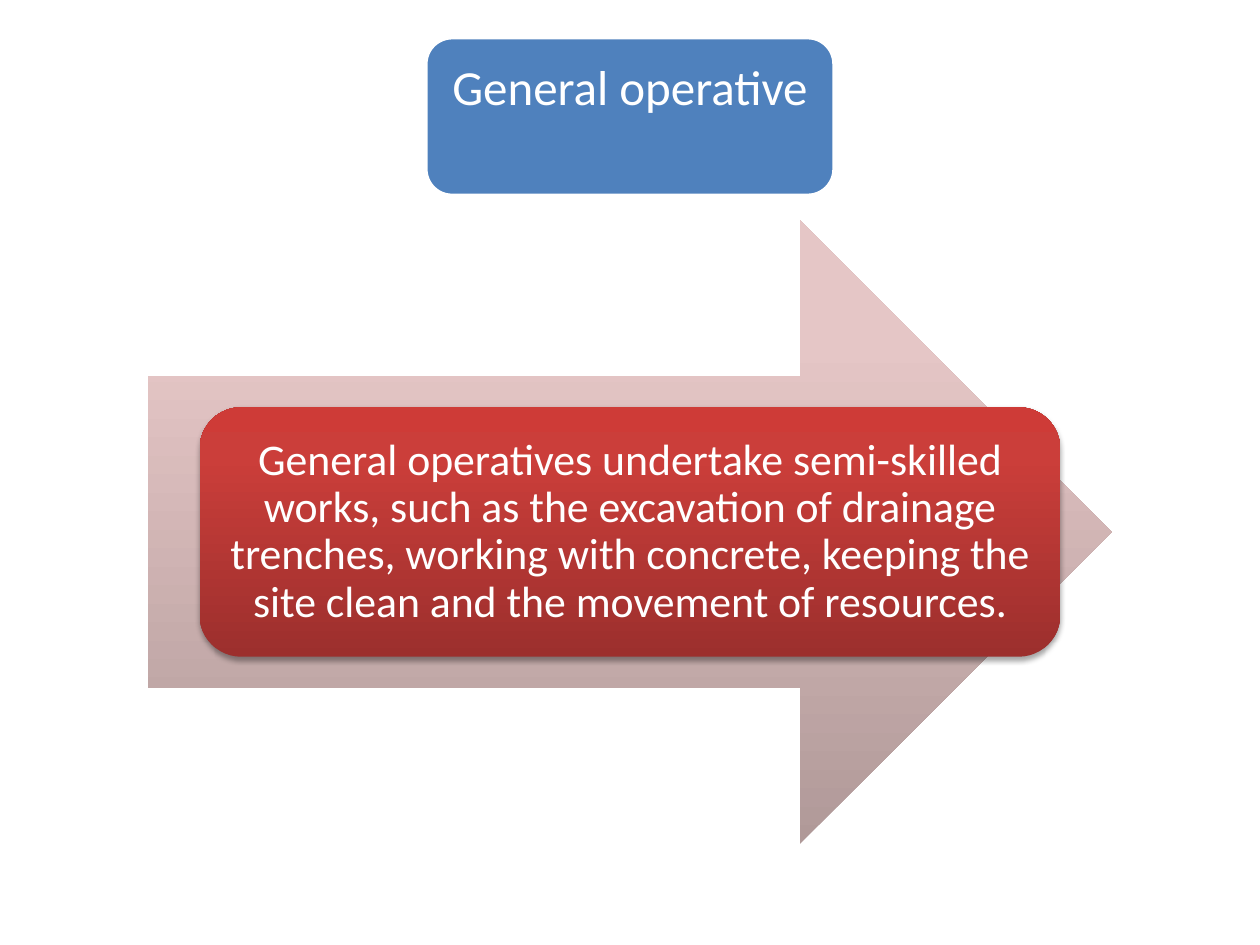
import dataclasses
import typing

import lxml.etree
import pptx
import pptx.dml.color
import pptx.enum.shapes
import pptx.enum.text
import pptx.oxml.ns
import pptx.util

Cm = pptx.util.Cm
KIND = pptx.enum.shapes.MSO_SHAPE
WIDE, HIGH = 25.4, 19.05
HUES = {
    "white": "FFFFFF", "blue": "4F81BD", "black": "000000",
    "rose low": "B09998", "rose mid": "E5C6C6", "rose top": "E6C7C6",
    "red low": "9C2F2D", "red mid": "CB3E3A", "red top": "CE3B37",
}
STOPS = (0, 80, 100)


@dataclasses.dataclass
class Block:
    """A shape centred across the slide; lengths in cm."""
    kind: typing.Any
    top: float
    width: float
    height: float
    fills: tuple[str, ...]
    edge: str = ""
    shade: bool = False


def rgb(hue: str) -> pptx.dml.color.RGBColor:
    return pptx.dml.color.RGBColor.from_string(HUES[hue])


def add_node(root, tag: str, **attrs):
    return lxml.etree.SubElement(root, pptx.oxml.ns.qn(tag), attrs)


def fill_shape(shape, hues: tuple[str, ...]) -> None:
    if len(hues) == 1:
        shape.fill.solid()
        shape.fill.fore_color.rgb = rgb(hues[0])
        return
    # Gradient running from the bottom up
    shape.fill.gradient()
    shape.fill.gradient_angle = 90
    stops = shape._element.spPr.find(".//" + pptx.oxml.ns.qn("a:gsLst"))
    for old in list(stops):
        stops.remove(old)
    for pos, hue in zip(STOPS, hues):
        stop = add_node(stops, "a:gs", pos=str(pos * 1000))
        add_node(stop, "a:srgbClr", val=HUES[hue])


def add_shade(shape) -> None:
    """Soft shadow straight below the shape."""
    glow = shape._element.spPr.find(pptx.oxml.ns.qn("a:effectLst"))
    outer = add_node(glow, "a:outerShdw", blurRad=str(pptx.util.Pt(3.1)),
                     dist=str(pptx.util.Pt(1.8)), dir="5400000", rotWithShape="0")
    hue = add_node(outer, "a:srgbClr", val=HUES["black"])
    add_node(hue, "a:alpha", val="35000")


def draw_block(slide, block: Block):
    left = (WIDE - block.width) / 2
    shape = slide.shapes.add_shape(
        block.kind, Cm(left), Cm(block.top), Cm(block.width), Cm(block.height))
    fill_shape(shape, block.fills)
    if block.edge:
        shape.line.color.rgb = rgb(block.edge)
        shape.line.width = pptx.util.Pt(2)
    else:
        shape.line.fill.background()
    shape.shadow.inherit = False
    if block.shade:
        add_shade(shape)
    return shape


def set_text(shape, text: str, *, size: float, side: float = 0, base: float = 0,
             hue: str = "white", font: str = "Calibri") -> None:
    frame = shape.text_frame
    frame.word_wrap = True
    frame.vertical_anchor = pptx.enum.text.MSO_ANCHOR.MIDDLE
    frame.margin_left = frame.margin_right = Cm(side)
    frame.margin_top, frame.margin_bottom = Cm(0), Cm(base)
    para = frame.paragraphs[0]
    para.alignment = pptx.enum.text.PP_ALIGN.CENTER
    para.line_spacing = 0.9
    run = para.add_run()
    run.text = text
    run.font.name = font
    run.font.size = pptx.util.Pt(size)
    run.font.color.rgb = rgb(hue)


def main() -> None:
    deck = pptx.Presentation()
    deck.slide_width, deck.slide_height = Cm(WIDE), Cm(HIGH)
    slide = deck.slides.add_slide(deck.slide_layouts[6])

    # Title box, with its text held in the upper half
    title = draw_block(slide, Block(
        KIND.ROUNDED_RECTANGLE, 0.76, 8.23, 3.18, ("blue",), edge="white"))
    set_text(title, "General operative", size=28, side=0.15, base=1.08)

    # Arrow behind the description
    arrow = Block(KIND.RIGHT_ARROW, 4.44, 19.43, 12.57,
                  ("rose low", "rose mid", "rose top"))
    draw_block(slide, arrow)

    # Description box, centred on the arrow's height
    tall = 5.03
    role = draw_block(slide, Block(
        KIND.ROUNDED_RECTANGLE, arrow.top + (arrow.height - tall) / 2, 17.35, tall,
        ("red low", "red mid", "red top"), shade=True))
    set_text(role, "General operatives undertake semi-skilled works, such as the "
             "excavation of drainage trenches, working with concrete, keeping the "
             "site clean and the movement of resources.", size=25)

    deck.save("out.pptx")


if __name__ == "__main__":
    main()
